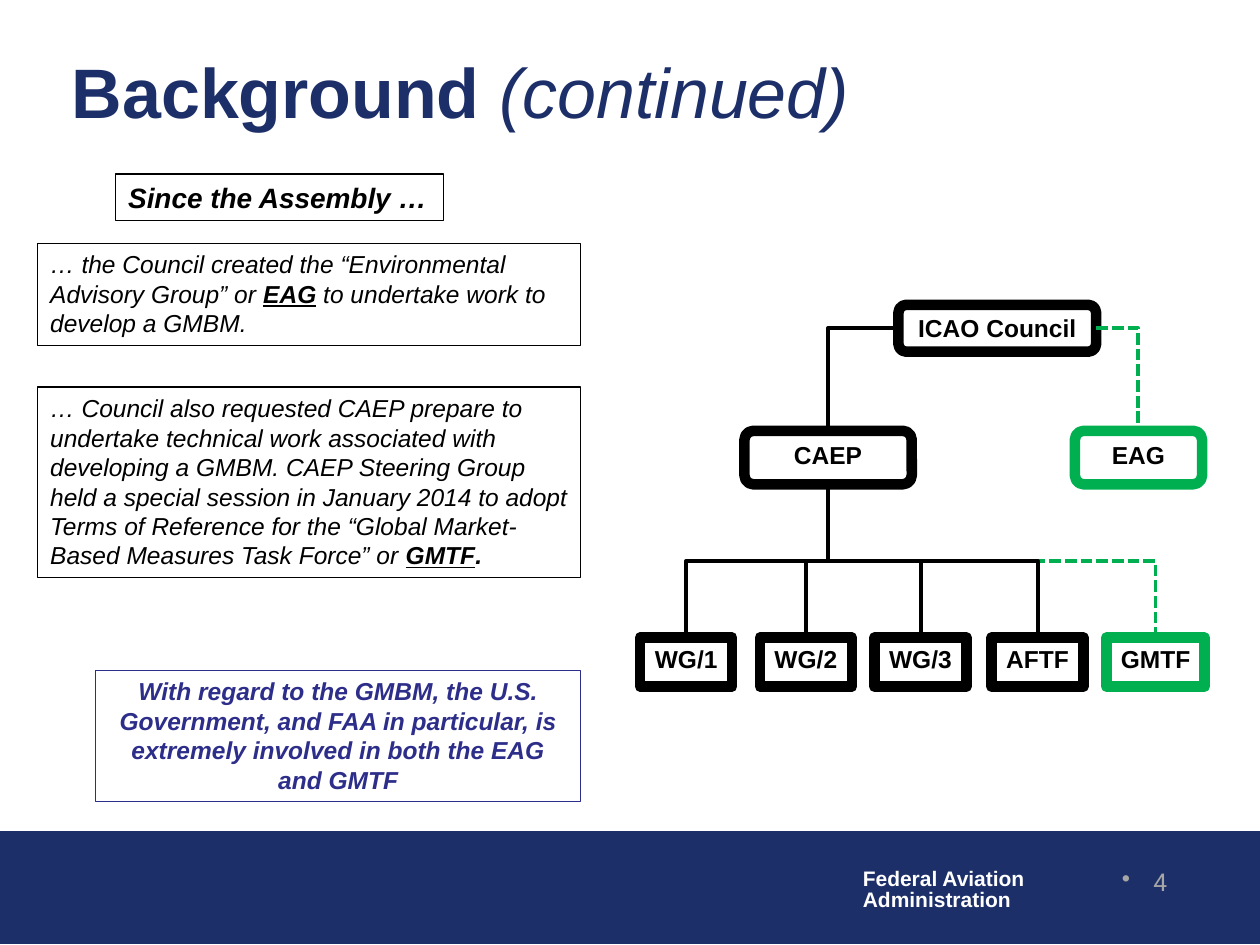
from dataclasses import dataclass

from pptx import Presentation
from pptx import util as u
from pptx.dml.color import RGBColor
from pptx.enum import dml, shapes, text
from pptx.oxml.ns import qn
from lxml import etree

Pt = u.Pt
RECT = shapes.MSO_SHAPE.RECTANGLE
ROUND = shapes.MSO_SHAPE.ROUNDED_RECTANGLE
TOP, LEFT, BOTTOM, RIGHT = range(4)


@dataclass(frozen=True)
class Theme:
    navy: str = "1D2F68"
    violet: str = "2D2D8A"
    green: str = "00B050"
    black: str = "000000"
    white: str = "FFFFFF"
    grey: str = "A6A6A6"
    face: str = "Arial"
    digit: str = "Roboto"
    title: int = 40
    head: int = 16
    body: int = 14
    foot: int = 12
    thin: float = 0.75
    link: float = 2.25
    thick: float = 6


class Deck:
    def __init__(self, theme):
        self.theme = theme
        self.prs = Presentation()
        self.prs.slide_width, self.prs.slide_height = Pt(720), Pt(540)
        self.slide = self.prs.slides.add_slide(self.prs.slide_layouts[5])

    def style(self, font, size, color, bold=None, italic=None, face=None):
        font.name, font.size = face or self.theme.face, Pt(size)
        font.bold, font.italic = bold, italic
        font.color.rgb = RGBColor.from_string(color)

    def put(self, frame, runs, size, color, align="LEFT", wrap=False, **look):
        """Fill the first paragraph; a run is (words, font changes)."""
        frame.word_wrap = wrap
        frame.auto_size = text.MSO_AUTO_SIZE.NONE
        par = frame.paragraphs[0]
        par.alignment = getattr(text.PP_ALIGN, align)
        self.style(par.font, size, color, **look)
        for words, change in runs:
            run = par.add_run()
            run.text = words
            for key, value in change.items():
                setattr(run.font, key, value)
        return par

    def title(self, box, runs):
        shape = self.slide.shapes.title
        shape.left, shape.top, shape.width, shape.height = map(Pt, box)
        shape.text_frame.vertical_anchor = text.MSO_ANCHOR.MIDDLE
        self.put(shape.text_frame, runs, self.theme.title, self.theme.navy,
                 wrap=True, bold=True)

    def label(self, box, lines, size, color, **look):
        shape = self.slide.shapes.add_textbox(*map(Pt, box))
        par = self.put(shape.text_frame, [], size, color, **look)
        for i, words in enumerate(lines):
            if i:
                par.add_line_break()
            par.add_run().text = words
        return par

    def box(self, box, color, width, kind=RECT, fill=None):
        shape = self.slide.shapes.add_shape(kind, *map(Pt, box))
        shape.shadow.inherit = False
        if fill:
            shape.fill.solid()
            shape.fill.fore_color.rgb = RGBColor.from_string(fill)
        else:
            shape.fill.background()
        shape.line.color.rgb = RGBColor.from_string(color)
        shape.line.width = Pt(width)
        shape.text_frame.vertical_anchor = text.MSO_ANCHOR.TOP
        return shape

    def note(self, box, runs, size, color, **look):
        shape = self.box(box, color, self.theme.thin)
        self.put(shape.text_frame, runs, size, color, italic=True, **look)

    def node(self, box, words, kind=RECT, color=None):
        shape = self.box(box, color or self.theme.black, self.theme.thick, kind)
        self.put(shape.text_frame, [(words, {})], self.theme.body,
                 self.theme.black, "CENTER", bold=True)
        return shape

    def link(self, start, side, end, color=None):
        """Elbow from one side of a node to the top of another."""
        line = self.slide.shapes.add_connector(
            shapes.MSO_CONNECTOR.ELBOW, 0, 0, 0, 0)
        line.begin_connect(start, side)
        line.end_connect(end, TOP)
        line.line.color.rgb = RGBColor.from_string(color or self.theme.black)
        line.line.width = Pt(self.theme.link)
        if color:
            line.line.dash_style = dml.MSO_LINE.SQUARE_DOT
        props = line._element.spPr
        etree.SubElement(props, qn("a:effectLst"))
        if side == BOTTOM:
            self.turn(line, props.find(qn("a:xfrm")))
        else:
            props.find(qn("a:prstGeom")).set("prst", "bentConnector2")

    def turn(self, line, frame):
        """Rotate an elbow so that it leaves downwards."""
        across, down = line.end_x - line.begin_x, line.end_y - line.begin_y
        midx = (line.begin_x + line.end_x) // 2
        midy = (line.begin_y + line.end_y) // 2
        for key in ("flipH", "flipV"):
            frame.attrib.pop(key, None)
        line.width, line.height = down, abs(across)
        line.left, line.top = midx - down // 2, midy - abs(across) // 2
        frame.set("rot", str((270 if across > 0 else 90) * 60000))
        if across > 0:
            frame.set("flipH", "1")


def main():
    t = Theme()
    deck = Deck(t)

    # Footer band
    deck.box((0, 475.2, 720, 64.1), t.navy, t.thin, fill=t.navy)
    par = deck.label((486, 493.2, 108, 31.7),
                     ["Federal Aviation", "Administration"],
                     t.foot, t.white, bold=True)
    par.line_spacing = 0.85

    # Slide number with its bullet
    page = deck.label((589, 491.8, 85, 36), ["4"], t.body, t.grey,
                      align="RIGHT", wrap=True, face=t.digit)
    props = page._p.get_or_add_pPr()
    props.set("marL", str(Pt(18)))
    props.set("indent", str(-Pt(18)))
    mark = etree.Element(qn("a:buChar"), char="•")
    props.insert(0, mark)

    # Title
    deck.title((33.8, 27.4, 667.4, 48.2),
               [("Background ", {}), ("(continued)", {"bold": False, "italic": True})])

    # Notes on the left
    key = {"bold": True, "underline": True}
    deck.note((66.2, 99.4, 187.2, 26.6), [("Since the Assembly …", {})],
              t.head, t.black, bold=True)
    deck.note((21.6, 139, 310.3, 58.3), [
        ("… the Council created the “Environmental Advisory Group” or ", {}),
        ("EAG", key),
        (" to undertake work to develop a GMBM.", {}),
    ], t.body, t.black, wrap=True)
    deck.note((21.6, 221.2, 310.3, 108.7), [
        ("… Council also requested CAEP prepare to undertake technical work "
         "associated with developing a GMBM. CAEP Steering Group held a special "
         "session in January 2014 to adopt Terms of Reference for the “Global "
         "Market-Based Measures Task Force” or ", {}),
        ("GMTF", key),
        (".", {"bold": True}),
    ], t.body, t.black, wrap=True)
    deck.note((54.7, 383, 277.2, 74.9), [
        ("With regard to the GMBM, the U.S. Government, and FAA in particular, "
         "is extremely involved in both the EAG and GMTF", {}),
    ], t.body, t.violet, align="CENTER", wrap=True, bold=True)

    # Upper levels of the chart
    top = deck.node((513.4, 174.2, 113, 26.8), "ICAO Council", ROUND)
    caep = deck.node((425.4, 246.2, 95.6, 30.6), "CAEP", ROUND)
    eag = deck.node((614.2, 246.2, 72.7, 30.6), "EAG", ROUND, t.green)
    deck.link(top, LEFT, caep)
    deck.link(top, RIGHT, eag, t.green)

    # Working groups; the new one is green and its link goes below the others
    groups = [("GMTF", 632.2, 56.2, t.green), ("WG/1", 365.8, 52.6, None),
              ("WG/2", 434.2, 52.6, None), ("WG/3", 499.7, 52.6, None),
              ("AFTF", 566.6, 52.6, None)]
    for name, x, width, color in groups:
        group = deck.node((x, 364.3, width, 28.1), name, color=color)
        deck.link(caep, BOTTOM, group, color)

    deck.prs.save("out.pptx")


if __name__ == "__main__":
    main()
